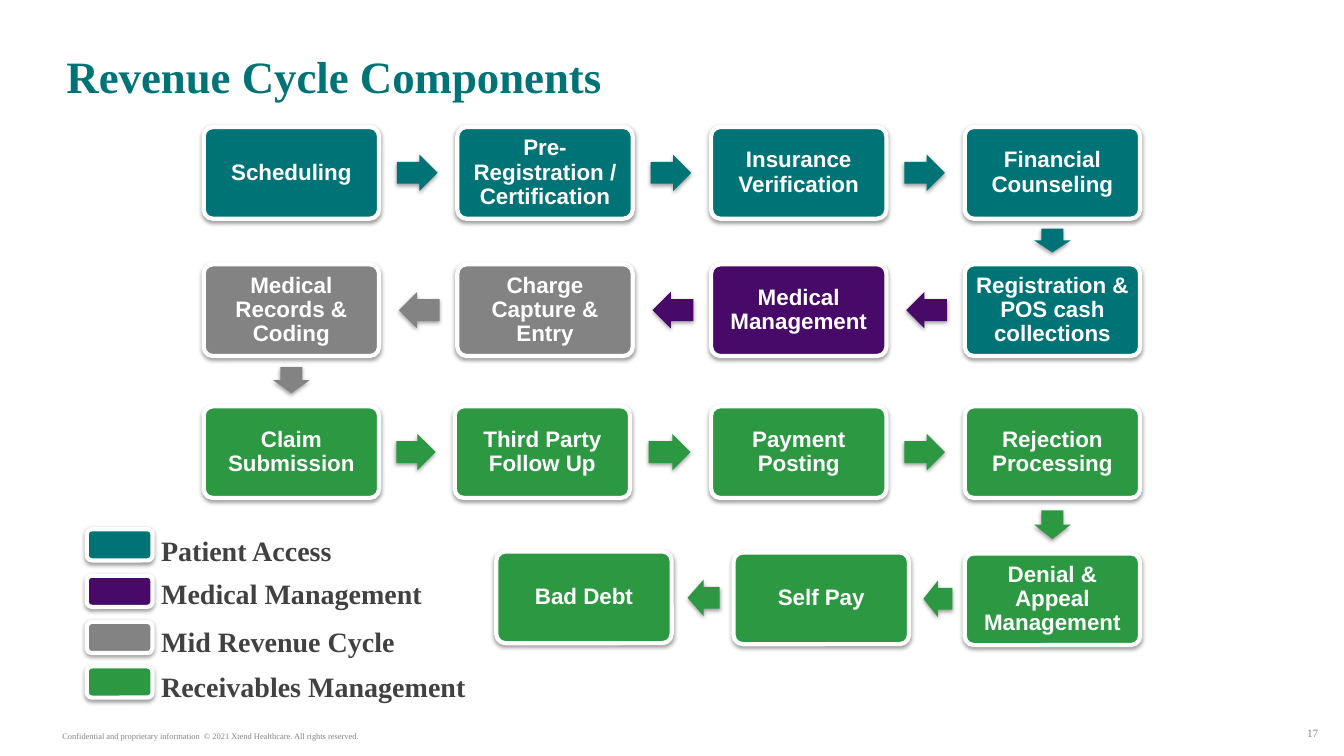
from lxml.etree import SubElement
from pptx import Presentation
from pptx.dml.color import RGBColor
from pptx.enum.shapes import MSO_SHAPE as Preset
from pptx.enum.text import MSO_ANCHOR as Anchor, PP_ALIGN as Align
from pptx.oxml.ns import qn
from pptx.util import Pt

TEAL = RGBColor(0x00, 0x73, 0x77)
PURPLE = RGBColor(0x47, 0x0A, 0x68)
GREY = RGBColor(0x83, 0x83, 0x83)
GREEN = RGBColor(0x2C, 0x99, 0x42)
WHITE = RGBColor(0xFF, 0xFF, 0xFF)
CHARCOAL = RGBColor(0x41, 0x41, 0x41)

STEP_W, STEP_H = 125.3, 65.5
ARROW_BREADTH = 26
ARROW_SHARE = 0.52  # arrow length as a share of the gap it bridges
ARROW_LAG = 0.7  # arrows sit slightly back from the middle of the gap


class FlowSlide:
    """Holds the slide and its style, and draws each kind of element."""

    serif, sans = "Times New Roman", "Arial"

    def __init__(self, slide):
        self.shapes = slide.shapes

    def add_text(self, frame, text, font, size, color, bold=False, align=Align.LEFT):
        paragraph = frame.paragraphs[0]
        paragraph.alignment = align
        run = paragraph.add_run()
        run.text = text
        run.font.name, run.font.size, run.font.bold = font, Pt(size), bold
        run.font.color.rgb = color
        return paragraph

    def label(self, text, left, top, width, height, size, color,
              bold=False, align=Align.LEFT, side=7.2, wrap=True):
        frame = self.shapes.add_textbox(Pt(left), Pt(top), Pt(width), Pt(height)).text_frame
        frame.word_wrap = wrap
        frame.margin_left = frame.margin_right = Pt(side)
        self.add_text(frame, text, self.serif, size, color, bold, align)

    def solid(self, preset, left, top, width, height, color, outlined=True):
        shape = self.shapes.add_shape(preset, Pt(left), Pt(top), Pt(width), Pt(height))
        shape.fill.solid()
        shape.fill.fore_color.rgb = color
        if outlined:
            shape.line.color.rgb = WHITE
            shape.line.width = Pt(3)
        else:
            shape.line.fill.background()
        self.cast_shadow(shape)
        return shape

    def cast_shadow(self, shape):
        shape.shadow.inherit = False
        effects = shape._element.spPr.find(qn("a:effectLst"))
        shadow = SubElement(effects, qn("a:outerShdw"), blurRad=str(Pt(3.1)),
                            dist=str(Pt(1.6)), dir="5400000", rotWithShape="0")
        black = SubElement(shadow, qn("a:srgbClr"), val="000000")
        SubElement(black, qn("a:alpha"), val="38000")

    def step(self, text, left, top, color):
        box = self.solid(Preset.ROUNDED_RECTANGLE, left, top, STEP_W, STEP_H, color)
        box.adjustments[0] = 0.1
        frame = box.text_frame
        frame.word_wrap = True
        frame.vertical_anchor = Anchor.MIDDLE
        frame.margin_left = frame.margin_right = Pt(5)
        frame.margin_top = frame.margin_bottom = Pt(5)
        paragraph = self.add_text(frame, text, self.sans, 16, WHITE, True, Align.CENTER)
        paragraph.line_spacing = 0.9

    def arrow(self, start, end, color):
        """Bridge the gap between the boxes at two (left, top) corners."""
        dx, dy = end[0] - start[0], end[1] - start[1]
        mid_x = (start[0] + end[0] + STEP_W) / 2
        mid_y = (start[1] + end[1] + STEP_H) / 2
        if abs(dx) > abs(dy):
            preset = Preset.RIGHT_ARROW if dx > 0 else Preset.LEFT_ARROW
            width, height = (abs(dx) - STEP_W) * ARROW_SHARE, ARROW_BREADTH
            mid_x -= ARROW_LAG if dx > 0 else -ARROW_LAG
        else:
            preset = Preset.DOWN_ARROW
            width, height = ARROW_BREADTH, (dy - STEP_H) * ARROW_SHARE
            mid_y -= ARROW_LAG
        arrow = self.solid(preset, mid_x - width / 2, mid_y - height / 2,
                           width, height, color, outlined=False)
        arrow.adjustments[0], arrow.adjustments[1] = 0.6, 0.5

    def legend_entry(self, text, color, swatch_top, label_top):
        self.solid(Preset.FLOWCHART_ALTERNATE_PROCESS, 62, swatch_top, 47, 22.3, color)
        self.label(text, 108, label_top, 241, 31.7, 20, CHARCOAL, bold=True)


A, B, C, D = [145.5 + 181.2 * column for column in range(4)]

# Steps in flow order: text, left, top, box colour, colour of the arrow that follows
STEPS = [
    ("Scheduling", A, 90.7, TEAL, TEAL),
    ("Pre-Registration / Certification", B, 90.7, TEAL, TEAL),
    ("Insurance Verification", C, 90.7, TEAL, TEAL),
    ("Financial Counseling", D, 90.7, TEAL, TEAL),
    ("Registration & POS cash collections", D, 188.8, TEAL, PURPLE),
    ("Medical Management", C, 188.8, PURPLE, PURPLE),
    ("Charge Capture & Entry", B, 188.8, GREY, GREY),
    ("Medical Records & Coding", A, 188.8, GREY, GREY),
    ("Claim Submission", A, 290.2, GREEN, GREEN),
    ("Third Party Follow Up", 324.8, 290.2, GREEN, GREEN),
    ("Payment Posting", C, 290.2, GREEN, GREEN),
    ("Rejection Processing", D, 290.2, GREEN, GREEN),
    ("Denial & Appeal Management", D, 395.3, GREEN, GREEN),
    ("Self Pay", 524, 394.6, GREEN, GREEN),
    ("Bad Debt", 354.5, 393.9, GREEN, None),
]

# Legend: text, colour, swatch top, label top
LEGEND = [
    ("Patient Access", TEAL, 378, 377.3),
    ("Medical Management", PURPLE, 411.2, 408.5),
    ("Mid Revenue Cycle", GREY, 444.2, 442.8),
    ("Receivables Management", GREEN, 476, 474.8),
]


def main():
    deck = Presentation()
    deck.slide_width, deck.slide_height = Pt(960), Pt(540)
    page = FlowSlide(deck.slides.add_slide(deck.slide_layouts[6]))

    # Footer and title
    page.label("17", 887, 515.5, 54.7, 19.4, 8, GREY, align=Align.RIGHT, side=0)
    page.label("Confidential and proprietary information  © 2021 Xtend Healthcare. "
               "All rights reserved.", 37.5, 518.4, 227.5, 14.4, 6, GREY, wrap=False)
    page.label("Revenue Cycle Components", 47.5, 31, 648, 39, 32, TEAL, bold=True, side=0)

    # Process boxes and the arrows between them
    for text, left, top, color, _ in STEPS:
        page.step(text, left, top, color)
    for start, end in zip(STEPS, STEPS[1:]):
        page.arrow(start[1:3], end[1:3], start[4])

    # Legend
    for entry in LEGEND:
        page.legend_entry(*entry)

    deck.save("out.pptx")


if __name__ == "__main__":
    main()
